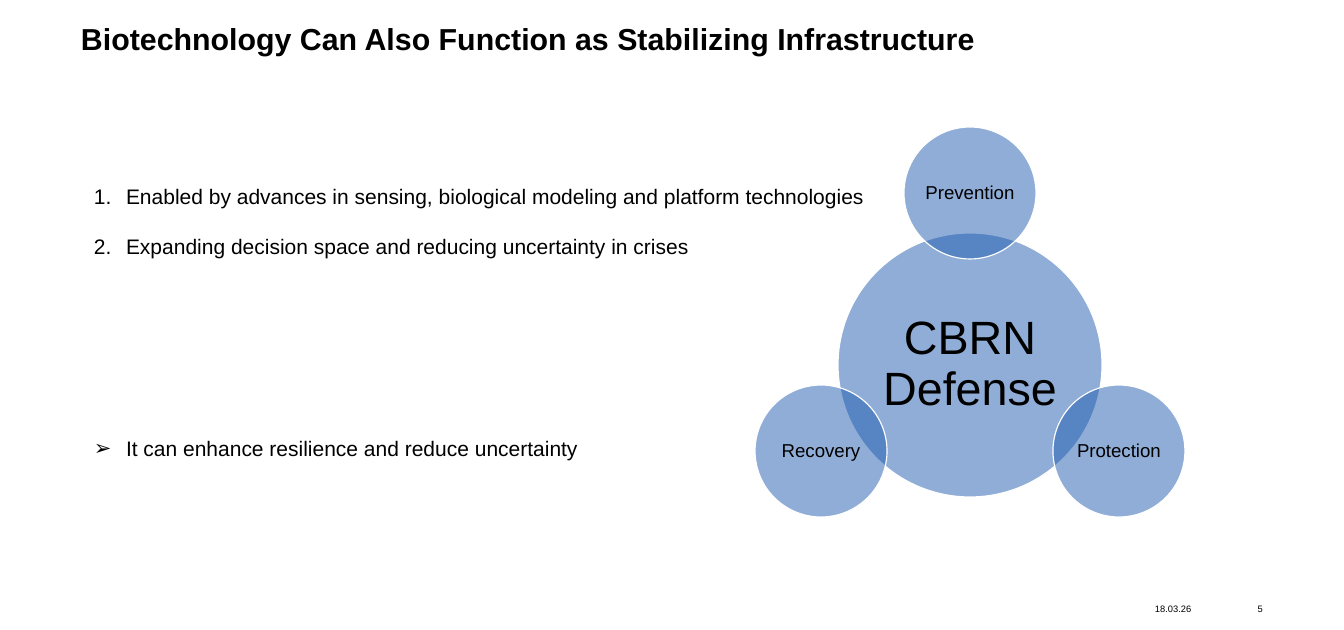
from math import cos, radians, sin

from lxml.etree import SubElement
from pptx import Presentation
from pptx.dml.color import RGBColor
from pptx.enum.shapes import MSO_SHAPE as Shape
from pptx.enum.text import MSO_ANCHOR as Anchor, MSO_AUTO_SIZE as AutoSize, PP_ALIGN as Align
from pptx.oxml.ns import qn
from pptx.util import Pt

TITLE = "Biotechnology Can Also Function as Stabilizing Infrastructure"
NUMBERED = {"buAutoNum": {"type": "arabicPeriod"}}
ARROW = {"buChar": {"char": "➢"}}
POINTS = [
    ("Enabled by advances in sensing, biological modeling and platform technologies", NUMBERED, 0),
    ("Expanding decision space and reducing uncertainty in crises", NUMBERED, 0),
    ("It can enhance resilience and reduce uncertainty", ARROW, 130),
]
HUB = "CBRN Defense"
SATELLITES = ["Prevention", "Protection", "Recovery"]
FOOTER = [
    ("18.03.26", (1155, 599, 67, 20), Align.LEFT),
    ("5", (1228, 599, 35, 20), Align.RIGHT),
]

THEME = {
    "font": "Arial", "text": "000000", "circle": "215CAF", "outline": "FFFFFF",
    "opacity": 50, "title": 26, "body": 18, "hub": 40, "satellite": 16, "footer": 8,
}
PX = 914400 / 84
CENTER_X, CENTER_Y, ORBIT = 970, 365, 172
HUB_SIZE, SATELLITE_SIZE = 264, 132
INDENT = 32


def px(value):
    return round(value * PX)


def color(name):
    return RGBColor.from_string(THEME[name])


def place(shape, left, top, width, height):
    shape.left, shape.top, shape.width, shape.height = map(px, (left, top, width, height))


def set_frame(frame, anchor, inset_x=0, inset_y=0):
    frame.word_wrap = True
    frame.auto_size = AutoSize.NONE
    frame.vertical_anchor = anchor
    frame.margin_left = frame.margin_right = px(inset_x)
    frame.margin_top = frame.margin_bottom = px(inset_y)


def style(para, size, align, spacing=1.0, before=0, bold=False):
    para.alignment = align
    para.line_spacing = spacing
    para.space_before = Pt(before)
    for span in para.runs:
        span.font.name = THEME["font"]
        span.font.size = Pt(THEME[size])
        span.font.bold = bold
        span.font.color.rgb = color("text")


def add_bullet(para, bullet):
    properties = para._p.get_or_add_pPr()
    properties.set("marL", str(px(INDENT)))
    properties.set("indent", str(-px(INDENT)))
    for tag, attributes in bullet.items():
        SubElement(properties, qn(f"a:{tag}"), attributes)


def add_circle(page, text, x, y, diameter, size, inset):
    circle = page.shapes.add_shape(Shape.OVAL, 0, 0, 0, 0)
    place(circle, x - diameter / 2, y - diameter / 2, diameter, diameter)
    circle.shadow.inherit = False
    circle.fill.solid()
    circle.fill.fore_color.rgb = color("circle")
    fill = circle._element.spPr.find(qn("a:solidFill"))
    SubElement(fill[0], qn("a:alpha"), val=str(THEME["opacity"] * 1000))
    circle.line.color.rgb = color("outline")
    circle.line.width = Pt(1)
    set_frame(circle.text_frame, Anchor.MIDDLE, inset, inset)
    circle.text_frame.text = text
    style(circle.text_frame.paragraphs[0], size, Align.CENTER, 0.9)


def main():
    deck = Presentation()
    deck.slide_width, deck.slide_height = px(1344), px(630)
    page = deck.slides.add_slide(deck.slide_layouts[1])

    title, body = page.placeholders
    place(title, 81, 24, 1183, 82)
    set_frame(title.text_frame, Anchor.TOP)
    title.text_frame.text = TITLE
    style(title.text_frame.paragraphs[0], "title", Align.LEFT, 0.9, bold=True)

    add_circle(page, HUB, CENTER_X, CENTER_Y, HUB_SIZE, "hub", 5)
    for index, label in enumerate(SATELLITES):
        angle = radians(index * 360 / len(SATELLITES))
        x, y = CENTER_X + ORBIT * sin(angle), CENTER_Y - ORBIT * cos(angle)
        add_circle(page, label, x, y, SATELLITE_SIZE, "satellite", 0)

    for text, area, align in FOOTER:
        box = page.shapes.add_textbox(0, 0, 0, 0)
        place(box, *area)
        set_frame(box.text_frame, Anchor.MIDDLE)
        box.text_frame.text = text
        style(box.text_frame.paragraphs[0], "footer", align)

    place(body, 86, 154, 793, 306)
    set_frame(body.text_frame, Anchor.TOP, 8, 4)
    body.text_frame.text = "\n".join(text for text, _, _ in POINTS)
    for para, (_, bullet, before) in zip(body.text_frame.paragraphs, POINTS):
        add_bullet(para, bullet)
        style(para, "body", Align.LEFT, 2.0, before)

    deck.save("out.pptx")


if __name__ == "__main__":
    main()
